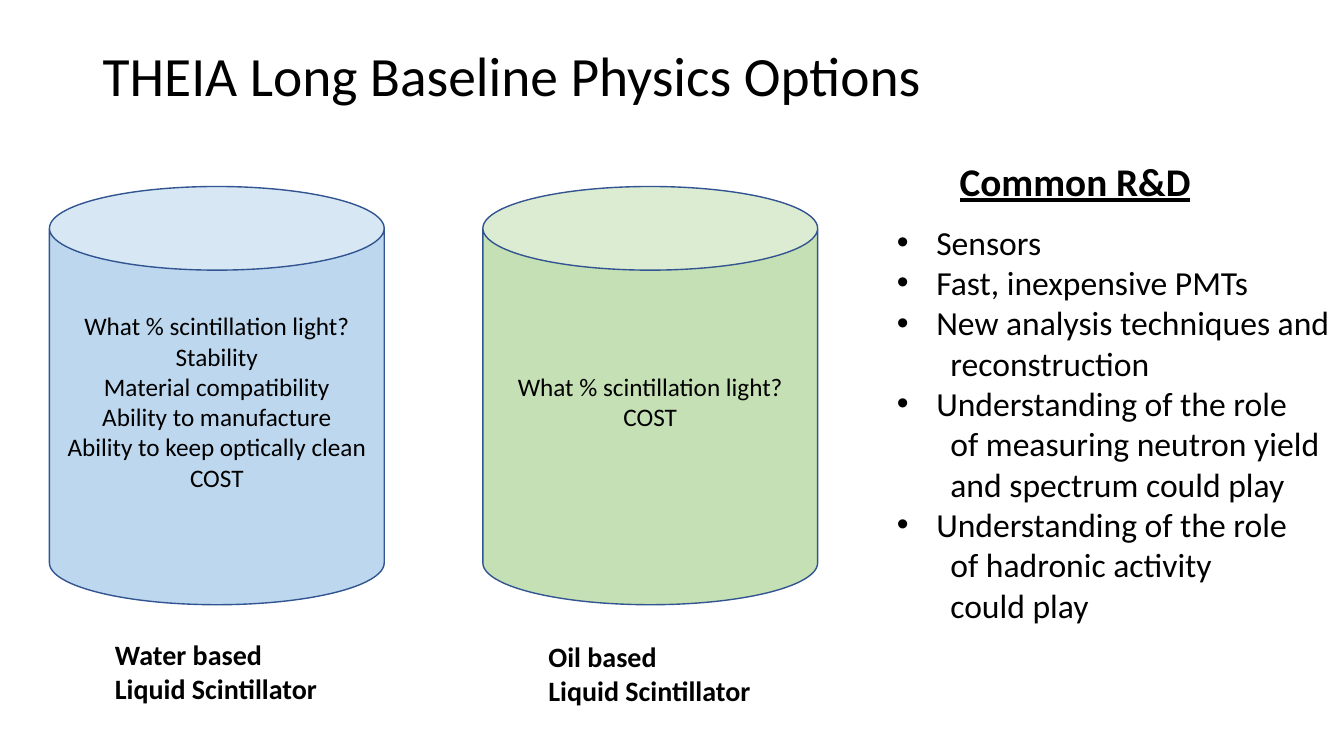
from dataclasses import dataclass

from lxml.etree import SubElement
from pptx import Presentation
from pptx.dml.color import RGBColor
from pptx.enum.shapes import MSO_SHAPE as Preset
from pptx.enum.text import MSO_ANCHOR as Anchor, PP_ALIGN as Align
from pptx.oxml.ns import qn
from pptx.util import Inches, Pt

TITLE = "THEIA Long Baseline Physics Options"
TANKS = [
    {
        "fill": "BDD7EE",
        "questions": [
            "What % scintillation light?",
            "Stability",
            "Material compatibility",
            "Ability to manufacture",
            "Ability to keep optically clean",
            "COST",
        ],
        "caption": ["Water based", "Liquid Scintillator"],
        "caption_top": 83.73,
    },
    {
        "fill": "C5E0B4",
        "questions": ["What % scintillation light?", "COST"],
        "caption": ["Oil based", "Liquid Scintillator"],
        "caption_top": 84,
    },
]
HEADING = "Common R&D"
TOPICS = [
    ["Sensors"],
    ["Fast, inexpensive PMTs"],
    ["New analysis techniques and", "reconstruction"],
    ["Understanding of the role", "of measuring neutron yield", "and spectrum could play"],
    ["Understanding of the role", "of hadronic activity", "could play"],
]

TITLE_AREA = (6.9, 5.33, 86.25, 10.13)
FIRST_TANK = (3.68, 24.67, 24.91, 55.33)
TANK_PITCH = 32.25
CAPTION_OFFSET, CAPTION_WIDTH, CAPTION_HEIGHT = 4.13, 16.65, 10.27
HEADING_AREA = (70.67, 20.13, 18.83, 7.6)
TOPICS_AREA = (66, 28.67, 33.98, 55.2)
BULLET_INDENT, CONTINUATION_INDENT = 0.39, 0.53


@dataclass(frozen=True)
class Theme:
    font: str = "Calibri"
    ink: str = "000000"
    outline: str = "325491"
    title: float = 39.6
    heading: float = 28
    topic: float = 24
    caption: float = 20
    question: float = 18


THEME = Theme()


def place(presentation, area):
    left, top, width, height = area
    slide_width, slide_height = presentation.slide_width, presentation.slide_height
    return [
        round(share * full / 100)
        for share, full in (
            (left, slide_width),
            (top, slide_height),
            (width, slide_width),
            (height, slide_height),
        )
    ]


def write(shape, lines, size, align=Align.LEFT, **formats):
    frame = shape.text_frame
    frame.text = "\n".join(lines)
    for paragraph in frame.paragraphs:
        paragraph.alignment = align
        font = paragraph.font
        font.color.rgb = RGBColor.from_string(THEME.ink)
        for name, value in {"name": THEME.font, "size": Pt(size), **formats}.items():
            setattr(font, name, value)
    return frame


def add_text(presentation, slide, area, lines, size, **formats):
    box = slide.shapes.add_textbox(*place(presentation, area))
    frame = write(box, lines, size, **formats)
    frame.word_wrap = False
    return frame


def add_tank(presentation, slide, index, tank):
    left, top, width, height = FIRST_TANK
    left += index * TANK_PITCH
    shape = slide.shapes.add_shape(
        Preset.CAN, *place(presentation, (left, top, width, height))
    )
    shape.shadow.inherit = False
    shape.fill.solid()
    shape.fill.fore_color.rgb = RGBColor.from_string(tank["fill"])
    shape.line.color.rgb = RGBColor.from_string(THEME.outline)
    shape.line.width = Pt(1)
    frame = write(shape, tank["questions"], THEME.question, Align.CENTER)
    frame.vertical_anchor = Anchor.MIDDLE
    frame.margin_bottom = Inches(0.35)
    caption_area = (
        left + CAPTION_OFFSET, tank["caption_top"], CAPTION_WIDTH, CAPTION_HEIGHT
    )
    add_text(presentation, slide, caption_area, tank["caption"], THEME.caption, bold=True)


def indent_topic_line(paragraph, starts_topic):
    properties = paragraph._p.get_or_add_pPr()
    indent = Inches(BULLET_INDENT if starts_topic else CONTINUATION_INDENT)
    properties.set("marL", str(indent))
    properties.set("indent", str(-indent if starts_topic else 0))
    if starts_topic:
        font = SubElement(properties, qn("a:buFont"))
        font.set("typeface", "Arial")
        SubElement(properties, qn("a:buChar")).set("char", "•")


def main():
    presentation = Presentation()
    presentation.slide_width = Inches(13.33)
    presentation.slide_height = Inches(7.5)
    slide = presentation.slides.add_slide(presentation.slide_layouts[6])

    title = add_text(presentation, slide, TITLE_AREA, [TITLE], THEME.title)
    title.word_wrap = True
    title.vertical_anchor = Anchor.MIDDLE
    title.paragraphs[0].line_spacing = 0.9

    for index, tank in enumerate(TANKS):
        add_tank(presentation, slide, index, tank)

    add_text(
        presentation, slide, HEADING_AREA, [HEADING], THEME.heading,
        bold=True, underline=True,
    )
    lines = [(line, row == 0) for topic in TOPICS for row, line in enumerate(topic)]
    topics = add_text(
        presentation, slide, TOPICS_AREA, [line for line, _ in lines], THEME.topic
    )
    for paragraph, (_, starts_topic) in zip(topics.paragraphs, lines):
        indent_topic_line(paragraph, starts_topic)

    presentation.save("out.pptx")


if __name__ == "__main__":
    main()
